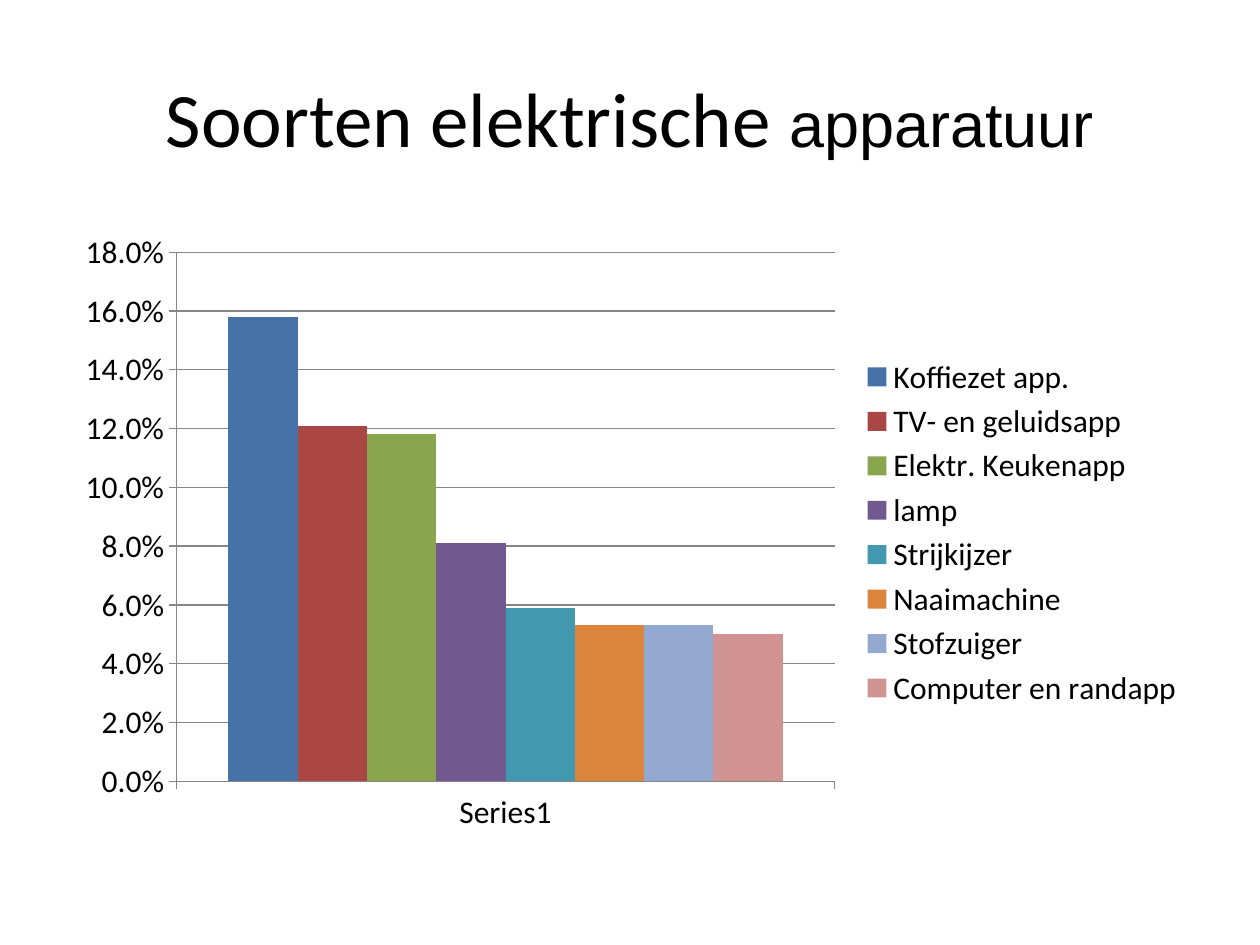
"""Build a slide with a column chart of kinds of electrical appliances."""
import pptx
import pptx.chart.data
import pptx.dml.color
import pptx.enum.chart
import pptx.enum.text
import pptx.util

Cm, Pt = pptx.util.Cm, pptx.util.Pt
RGBColor = pptx.dml.color.RGBColor

BLACK = RGBColor(0x00, 0x00, 0x00)
GREY = RGBColor(0x86, 0x86, 0x86)
BLUE = RGBColor(0x46, 0x72, 0xA8)
RED = RGBColor(0xAA, 0x46, 0x43)
GREEN = RGBColor(0x89, 0xA5, 0x4E)
PURPLE = RGBColor(0x71, 0x58, 0x8F)
TEAL = RGBColor(0x41, 0x98, 0xAF)
ORANGE = RGBColor(0xDB, 0x84, 0x3D)
PALE_BLUE = RGBColor(0x93, 0xA9, 0xCF)
PINK = RGBColor(0xD1, 0x93, 0x92)

MARGIN, CONTENT_WIDTH = Cm(1.27), Cm(22.86)
TITLE_RUNS = [("Soorten elektrische ", "Calibri", 44), ("apparatuur", "Arial", 36)]
APPLIANCES = [
    ("Koffiezet app.", 0.158, BLUE),
    ("TV- en geluidsapp", 0.121, RED),
    ("Elektr. Keukenapp", 0.118, GREEN),
    ("lamp", 0.081, PURPLE),
    ("Strijkijzer", 0.059, TEAL),
    ("Naaimachine", 0.053, ORANGE),
    ("Stofzuiger", 0.053, PALE_BLUE),
    ("Computer en randapp", 0.05, PINK),
]


def apply(target, values):
    for name, value in values.items():
        setattr(target, name, value)


def style_font(font, family, size):
    apply(font, {"name": family, "size": Pt(size), "bold": False})
    font.color.rgb = BLACK


def style_line(line):
    line.color.rgb = GREY
    line.width = Pt(0.75)


def add_title(slide):
    title = slide.shapes.add_textbox(MARGIN, Cm(0.76), CONTENT_WIDTH, Cm(3.18))
    apply(title.text_frame, {
        "word_wrap": True,
        "vertical_anchor": pptx.enum.text.MSO_ANCHOR.MIDDLE,
    })
    heading = title.text_frame.paragraphs[0]
    heading.alignment = pptx.enum.text.PP_ALIGN.CENTER
    for text, family, size in TITLE_RUNS:
        part = heading.add_run()
        part.text = text
        style_font(part.font, family, size)


def add_appliance_chart(slide):
    shares = pptx.chart.data.CategoryChartData(number_format="0.0%")
    shares.categories = ["Series1"]
    for name, share, _ in APPLIANCES:
        shares.add_series(name, [share])
    chart = slide.shapes.add_chart(
        pptx.enum.chart.XL_CHART_TYPE.COLUMN_CLUSTERED,
        MARGIN, Cm(4.45), CONTENT_WIDTH, Cm(12.57), shares).chart
    apply(chart, {"has_title": False, "has_legend": True})
    style_font(chart.font, "Calibri", 18)
    apply(chart.legend, {
        "position": pptx.enum.chart.XL_LEGEND_POSITION.RIGHT,
        "include_in_layout": False,
    })
    style_columns(chart.plots[0])
    style_axes(chart)


def style_columns(plot):
    apply(plot, {"gap_width": 150, "overlap": 0, "vary_by_categories": False})
    for column, (_, _, color) in zip(plot.series, APPLIANCES):
        column.format.fill.solid()
        column.format.fill.fore_color.rgb = color
        column.invert_if_negative = False


def style_axes(chart):
    for axis in (chart.category_axis, chart.value_axis):
        axis.major_tick_mark = pptx.enum.chart.XL_TICK_MARK.OUTSIDE
        style_line(axis.format.line)
    shares = chart.value_axis
    apply(shares, {
        "minimum_scale": 0,
        "maximum_scale": 0.18,
        "major_unit": 0.02,
        "has_major_gridlines": True,
    })
    style_line(shares.major_gridlines.format.line)
    apply(shares.tick_labels, {
        "number_format": "0.0%",
        "number_format_is_linked": False,
    })


def main():
    deck = pptx.Presentation()
    apply(deck, {"slide_width": Cm(25.4), "slide_height": Cm(19.05)})
    slide = deck.slides.add_slide(deck.slide_layouts[6])
    add_title(slide)
    add_appliance_chart(slide)
    deck.save("out.pptx")


if __name__ == "__main__":
    main()
